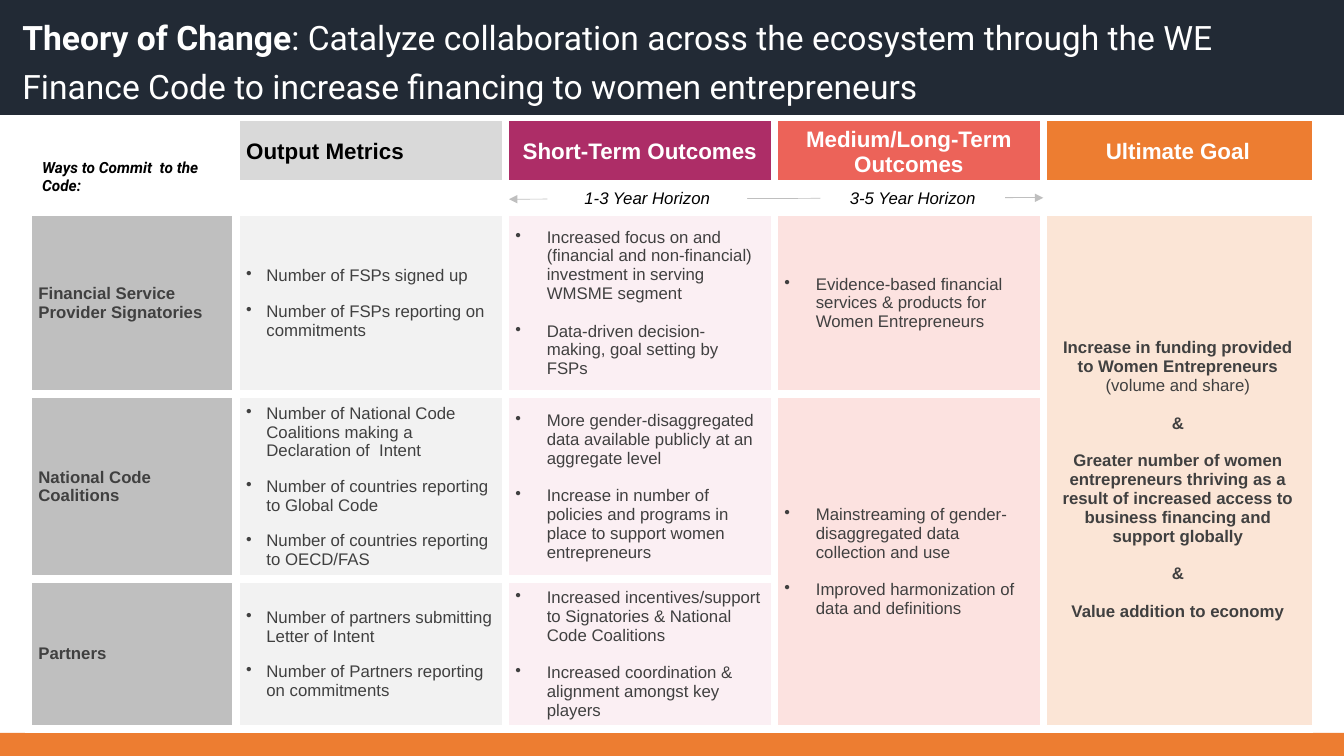
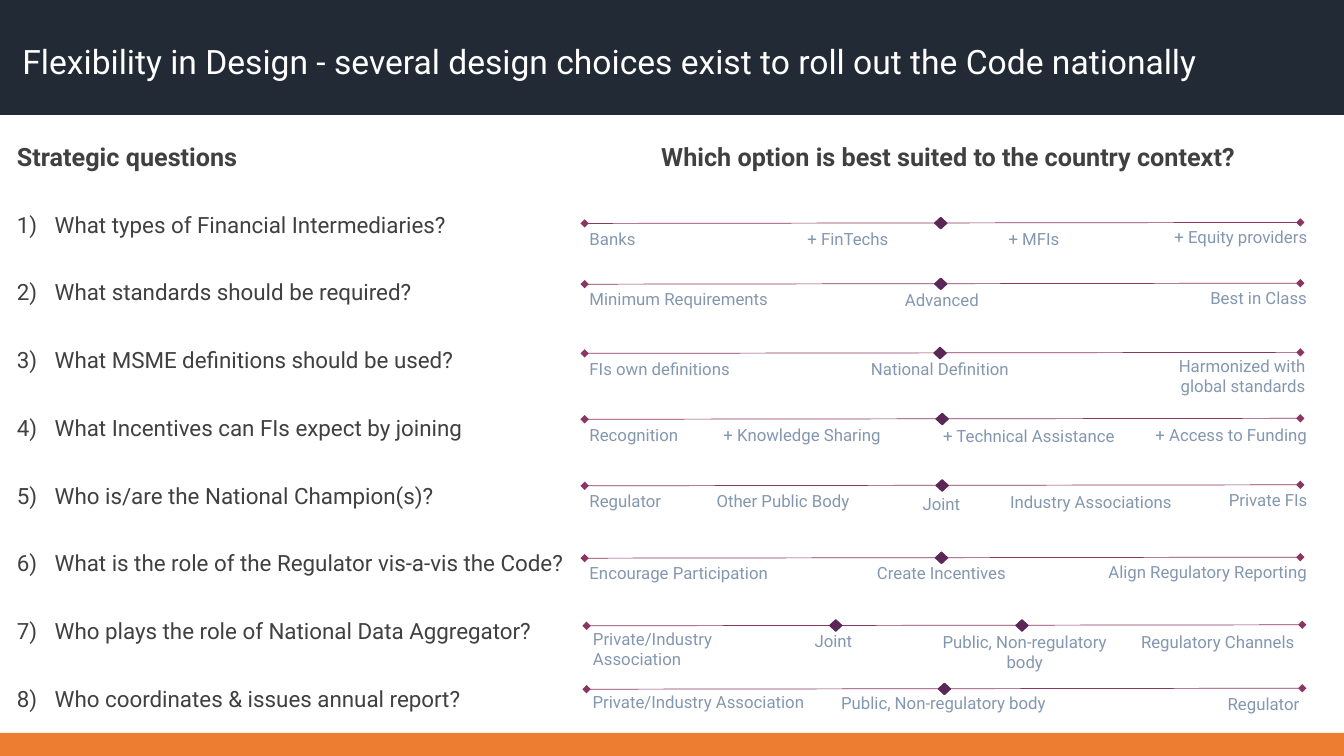
from dataclasses import dataclass, replace

from lxml import etree
from pptx import Presentation
from pptx.dml.color import RGBColor
from pptx.enum.shapes import MSO_CONNECTOR, MSO_SHAPE
from pptx.enum.text import MSO_ANCHOR, PP_ALIGN
from pptx.oxml.ns import qn
from pptx.util import Pt

LEFT, CENTER, RIGHT = PP_ALIGN.LEFT, PP_ALIGN.CENTER, PP_ALIGN.RIGHT
TOP, MIDDLE = MSO_ANCHOR.TOP, MSO_ANCHOR.MIDDLE
RECTANGLE, DIAMOND = MSO_SHAPE.RECTANGLE, MSO_SHAPE.DIAMOND
STRAIGHT = MSO_CONNECTOR.STRAIGHT


# Theme: colours, fonts and type sizes
@dataclass(frozen=True)
class Theme:
    width: float = 960
    height: float = 540
    band_height: float = 82
    footer_height: float = 16.5
    inset: float = 7.2
    heading_font: str = "Roboto"
    table_font: str = "Arial"
    title_size: int = 24
    heading_size: int = 18
    large_size: int = 16
    body_size: int = 12
    note_size: int = 11
    blank_size: int = 10
    navy: str = "222A35"
    orange: str = "ED7D31"
    white: str = "FFFFFF"
    black: str = "000000"
    text: str = "404040"
    label: str = "8497B0"
    arrow: str = "BFBFBF"
    scale: str = "8B3562"
    marker: str = "5A2757"
    header_fills: tuple = ("FFFFFF", "D9D9D9", "AD2D67", "EC6359", "ED7D31")
    body_fills: tuple = ("BFBFBF", "F2F2F2", "FBEFF3", "FCE2E0", "FBE5D6")


THEME = Theme()


@dataclass(frozen=True)
class Style:
    font: str = THEME.heading_font
    size: float = THEME.body_size
    color: str = THEME.text
    bold: bool = False
    italic: bool = False
    align: int = LEFT
    gap: float = 0        # space between paragraphs
    hang: float = 0       # hanging indent of a list
    bullet: tuple = ()    # bullet tag, attribute and value
    leading: float = 1


DOT = ("a:buChar", "char", "•")
NUMBER = ("a:buAutoNum", "type", "arabicParenR")
TITLE = Style(size=THEME.title_size, color=THEME.white, leading=1.2)
HEADING = Style(size=THEME.heading_size, bold=True)
QUESTION = Style(size=THEME.large_size, gap=29.2, hang=27, bullet=NUMBER)
LABEL = Style(color=THEME.label)
NOTE = Style(size=THEME.note_size, color=THEME.black, bold=True, italic=True)
CELL = Style(font=THEME.table_font)
HORIZON = replace(CELL, color=THEME.black, italic=True, align=CENTER)
ROW_NAME = replace(CELL, bold=True)
METRIC = replace(CELL, gap=12, hang=14.4, bullet=DOT)
OUTCOME = replace(CELL, gap=13.4, hang=22.5, bullet=DOT)
GOAL = replace(CELL, bold=True, align=CENTER, gap=13.4)
FIRST_HEADER = replace(CELL, size=THEME.large_size, color=THEME.black, bold=True)
HEADER = replace(FIRST_HEADER, color=THEME.white, align=CENTER)

# Theory of change: table content
COLUMN_WIDTHS = (148.5, 192.2, 192.2, 192.2, 192.2)
ROW_HEIGHTS = (43, 20, 130.3, 125, 101)
HEADERS = ("Output Metrics", "Short-Term Outcomes", "Medium/Long-Term Outcomes",
           "Ultimate Goal")
ROW_NAMES = ("Financial Service Provider Signatories", "National Code Coalitions",
             "Partners")
METRICS = (
    ("Number of FSPs signed up", "Number of FSPs reporting on commitments"),
    ("Number of National Code Coalitions making a Declaration of  Intent",
     "Number of countries reporting to Global Code",
     "Number of countries reporting to OECD/FAS"),
    ("Number of partners submitting Letter of Intent",
     "Number of Partners reporting on commitments"),
)
SHORT_TERM = (
    ("Increased focus on and (financial and non-financial) investment in serving "
     "WMSME segment", "Data-driven decision-making, goal setting by FSPs"),
    ("More gender-disaggregated data available publicly at an aggregate level",
     "Increase in number of policies and programs in place to support women "
     "entrepreneurs"),
    ("Increased incentives/support to Signatories & National Code Coalitions",
     "Increased coordination & alignment amongst key players"),
)
LONG_TERM = (
    ("Evidence-based financial services & products for Women Entrepreneurs",),
    ("Mainstreaming of gender-disaggregated data collection and use",
     "Improved harmonization of data and definitions"),
)
GOALS = (
    (("Increase in funding provided to Women Entrepreneurs ", True),
     ("(volume and share)", False)),
    "&",
    "Greater number of women entrepreneurs thriving as a result of increased access "
    "to business financing and support globally",
    "&",
    "Value addition to economy",
)

# Design choices: questions and their scales
QUESTIONS = (
    "What types of Financial Intermediaries?",
    "What standards should be required?",
    "What MSME definitions should be used?",
    "What Incentives can FIs expect by joining",
    "Who is/are the National Champion(s)?",
    "What is the role of the Regulator vis-a-vis the Code?",
    "Who plays the role of National Data Aggregator?",
    "Who coordinates & issues annual report?",
)
# Line height, line start, marker centres, then (text, alignment, x, drop) labels
SCALES = (
    (159.6, 417.6, (672,), (
        ("Banks", LEFT, 414, 0), ("+ FinTechs", CENTER, 605.7, 0),
        ("+ MFIs", CENTER, 738.6, 0), ("+ Equity providers", RIGHT, 941, -1.4))),
    (203, 417.6, (672,), (
        ("Minimum Requirements", LEFT, 414, 0), ("Advanced", CENTER, 672.8, 0.7),
        ("Best in Class", RIGHT, 940.7, -0.7))),
    (252.4, 417.6, (671.5,), (
        ("FIs own definitions", LEFT, 414, 0),
        ("National Definition", CENTER, 671.4, 0),
        ("Harmonized with\nglobal standards", RIGHT, 939.6, -2))),
    (299.5, 417.6, (673,), (
        ("Recognition", LEFT, 414, 0), ("+ Knowledge Sharing", CENTER, 573, 0),
        ("+ Technical Assistance", CENTER, 735, 1),
        ("+ Access to Funding", RIGHT, 940.7, 0.7))),
    (347, 417.6, (673,), (
        ("Regulator", LEFT, 414, 0), ("Other Public Body", CENTER, 559.3, 0),
        ("Joint", CENTER, 672.5, 2), ("Industry Associations", CENTER, 779.3, 0.7),
        ("Private FIs", RIGHT, 941, -0.7))),
    (398.7, 417.6, (672.5,), (
        ("Encourage Participation", LEFT, 414, 0),
        ("Create Incentives", CENTER, 672.5, 0),
        ("Align Regulatory Reporting", RIGHT, 940.7, -0.7))),
    (447, 419, (597, 730), (
        ("Private/Industry\nAssociation", LEFT, 416.5, -1.4),
        ("Joint", CENTER, 595.3, 0),
        ("Public, Non-regulatory\nbody", CENTER, 732, 0.7),
        ("Regulatory Channels", RIGHT, 931.8, 0.7))),
    (492.3, 419, (674.6,), (
        ("Private/Industry Association", LEFT, 416.2, -2),
        ("Public, Non-regulatory body", CENTER, 674, -0.9),
        ("Regulator", RIGHT, 935.3, 0))),
)
SCALE_LENGTH, SCALE_RISE = 511.2, 0.7
LABEL_WIDTH, LABEL_LINE = 180, 14.4


def rgb(code):
    return RGBColor.from_string(code)


def write(frame, paragraphs, style, anchor=TOP):
    """Fill a text frame; a paragraph is a string or a tuple of (text, bold)."""
    frame.word_wrap = True
    frame.vertical_anchor = anchor
    for index, content in enumerate(paragraphs):
        para = frame.add_paragraph() if index else frame.paragraphs[0]
        if style.bullet:
            tag, attribute, value = style.bullet
            props = para._p.get_or_add_pPr()
            props.set("marL", str(Pt(style.hang)))
            props.set("indent", str(-Pt(style.hang)))
            etree.SubElement(props, qn(tag)).set(attribute, value)
        para.alignment = style.align
        para.line_spacing = style.leading
        if index and style.gap:
            para.space_before = Pt(style.gap)
        spans = ((content, style.bold),) if isinstance(content, str) else content
        for text, bold in spans:
            span = para.add_run()
            span.text = text
            span.font.name, span.font.size = style.font, Pt(style.size)
            span.font.bold, span.font.italic = bold, style.italic
            span.font.color.rgb = rgb(style.color)


def add_text(page, left, top, width, height, paragraphs, style, anchor=TOP):
    box = page.shapes.add_textbox(Pt(left), Pt(top), Pt(width), Pt(height))
    write(box.text_frame, paragraphs, style, anchor)
    return box


def add_block(page, left, top, width, height, color, kind=RECTANGLE):
    shape = page.shapes.add_shape(kind, Pt(left), Pt(top), Pt(width), Pt(height))
    shape.shadow.inherit = False
    shape.fill.solid()
    shape.fill.fore_color.rgb = rgb(color)
    shape.line.fill.background()
    return shape


def add_line(page, start, end, color, **ends):
    line = page.shapes.add_connector(STRAIGHT, *(Pt(v) for v in (*start, *end)))
    line.line.color.rgb = rgb(color)
    line.line.width = Pt(0.5)
    outline = line.line._get_or_add_ln()
    for side in ("headEnd", "tailEnd"):
        if side in ends:
            etree.SubElement(outline, qn(f"a:{side}")).set("type", ends[side])
    etree.SubElement(line._element.spPr, qn("a:effectLst"))


def add_page(deck, title):
    """Slide with the title band and the footer band."""
    page = deck.slides.add_slide(deck.slide_layouts[6])
    add_block(page, 0, THEME.height - THEME.footer_height, THEME.width,
              THEME.footer_height, THEME.orange)
    add_block(page, 0, 0, THEME.width, THEME.band_height, THEME.navy)
    box = add_text(page, 0, 0, 946, THEME.band_height, [title], TITLE, MIDDLE)
    box.text_frame.margin_left = Pt(16)
    return page


def format_cell(cell, color, sides):
    props = cell._tc.get_or_add_tcPr()
    for side in sides:
        border = etree.SubElement(props, qn(f"a:ln{side}"), w=str(Pt(6)))
        fill = etree.SubElement(border, qn("a:solidFill"))
        etree.SubElement(fill, qn("a:srgbClr"), val=THEME.white)
    cell.fill.solid()
    cell.fill.fore_color.rgb = rgb(color)


def write_cell(cell, paragraphs, style):
    write(cell.text_frame, paragraphs, style)
    cell.vertical_anchor = MIDDLE


def add_change_table(page):
    rows, columns = len(ROW_HEIGHTS), len(COLUMN_WIDTHS)
    table = page.shapes.add_table(rows, columns, Pt(20.2), Pt(85.7),
                                  Pt(sum(COLUMN_WIDTHS)), Pt(sum(ROW_HEIGHTS))).table
    table.first_row = table.horz_banding = False
    for column, width in zip(table.columns, COLUMN_WIDTHS):
        column.width = Pt(width)
    for row, height in zip(table.rows, ROW_HEIGHTS):
        row.height = Pt(height)

    # Fills and white gutters
    for r in range(rows):
        fills = (THEME.header_fills, (THEME.white,) * columns)[r] if r < 2 \
            else THEME.body_fills
        for c in range(columns):
            sides = "L" + "R" * (c < columns - 1) + "T" * (r > 0) + "B"
            format_cell(table.cell(r, c), fills[c], sides)
    for first, last in (((1, 3), (1, 4)), ((2, 4), (4, 4)), ((3, 3), (4, 3))):
        table.cell(*first).merge(table.cell(*last))

    # Text
    for c, header in enumerate(HEADERS, 1):
        write_cell(table.cell(0, c), [header], HEADER if c > 1 else FIRST_HEADER)
    for r, name in enumerate(ROW_NAMES):
        write_cell(table.cell(r + 2, 0), [name], ROW_NAME)
        write_cell(table.cell(r + 2, 1), METRICS[r], METRIC)
        write_cell(table.cell(r + 2, 2), SHORT_TERM[r], OUTCOME)
    for r, outcomes in enumerate(LONG_TERM, 2):
        write_cell(table.cell(r, 3), outcomes, OUTCOME)
    goal = table.cell(2, 4)
    write_cell(goal, GOALS, GOAL)
    goal.margin_top = Pt(17)

    # Small type keeps the empty cells low
    for cell in table.iter_cells():
        if not cell.text_frame.text:
            etree.SubElement(cell.text_frame.paragraphs[0]._p, qn("a:endParaRPr"),
                             sz=str(THEME.blank_size * 100))


def add_horizons(page):
    add_line(page, (723.6, 141.3), (363.6, 142.3), THEME.arrow, tailEnd="triangle")
    add_line(page, (700, 141.3), (745.2, 141.3), THEME.arrow, tailEnd="triangle")
    for left, width, text in ((586, 131.8, "3-5 Year Horizon"),
                              (391, 142.6, "1-3 Year Horizon")):
        box = add_block(page, left, 130.5, width, 22, THEME.white)
        write(box.text_frame, [text], HORIZON)
    note = add_block(page, 23, 115.4, 136.8, 21, THEME.white)
    write(note.text_frame, ["Ways to Commit  to the Code:"], NOTE, MIDDLE)


def add_scale(page, y, start, markers, labels):
    add_line(page, (start, y), (start + SCALE_LENGTH, y - SCALE_RISE), THEME.scale,
             headEnd="diamond", tailEnd="diamond")
    for x in markers:
        marker = add_block(page, x - 4.3, y - 4.2, 8.6, 8, THEME.marker, DIAMOND)
        marker.line.color.rgb = rgb(THEME.marker)
        marker.line.width = Pt(1)
    shift = {LEFT: 0, CENTER: LABEL_WIDTH / 2, RIGHT: LABEL_WIDTH}
    for text, align, x, drop in labels:
        lines = text.split("\n")
        add_text(page, x - shift[align], y + drop, LABEL_WIDTH,
                 THEME.inset + LABEL_LINE * len(lines), lines,
                 replace(LABEL, align=align))


def main():
    deck = Presentation()
    deck.slide_width, deck.slide_height = Pt(THEME.width), Pt(THEME.height)

    # Theory of change
    page = add_page(deck, (
        ("Theory of Change", True),
        (": Catalyze collaboration across the ecosystem through the WE Finance Code "
         "to increase financing to women entrepreneurs", False)))
    add_change_table(page)
    add_horizons(page)

    # Design choices
    page = add_page(deck, "Flexibility in Design - several design choices exist to "
                          "roll out the Code nationally")
    add_text(page, 5, 147, 420, 370, QUESTIONS, QUESTION)
    add_text(page, 5, 97.2, 400, 29, ["Strategic questions"], HEADING)
    add_text(page, 417, 97.2, 520.5, 29,
             ["Which option is best suited to the country context?"],
             replace(HEADING, align=CENTER))
    for scale in SCALES:
        add_scale(page, *scale)

    deck.save("out.pptx")


if __name__ == "__main__":
    main()
